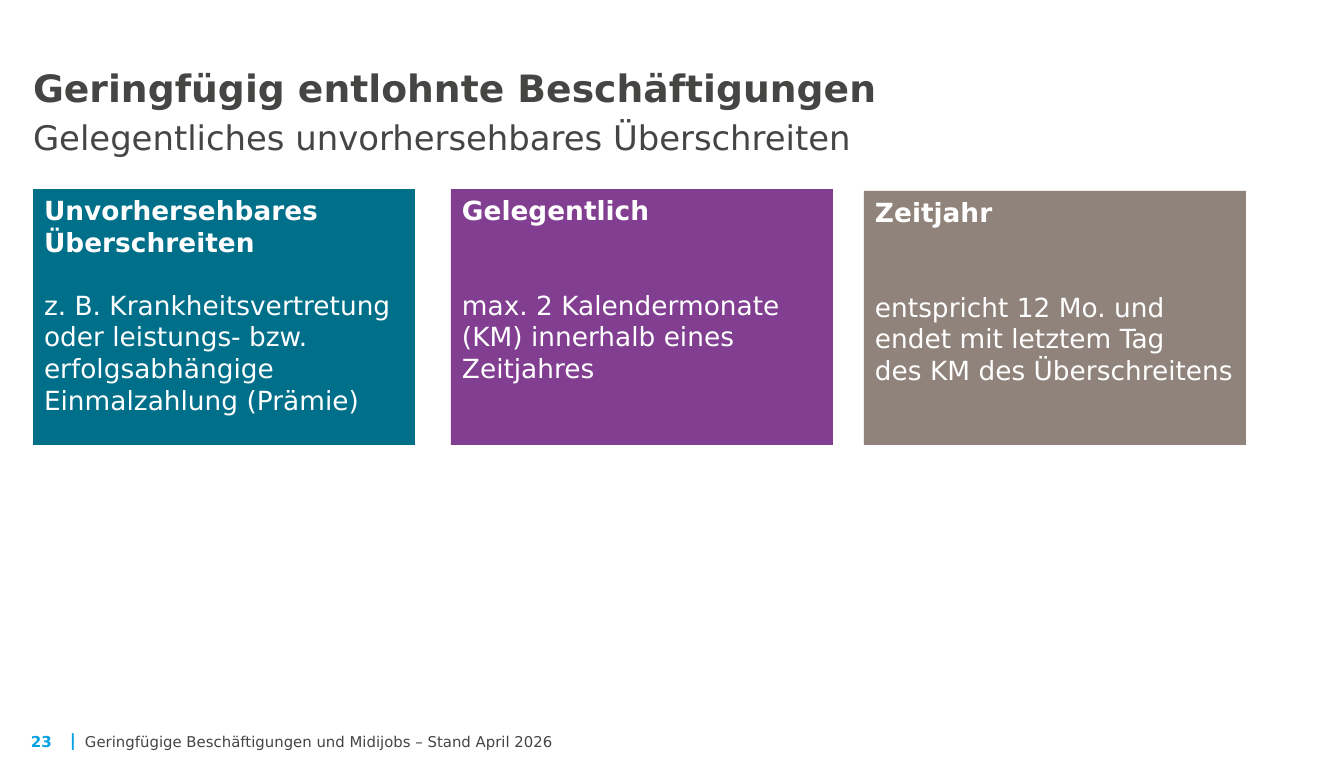
"""Build the slide on occasional, unforeseeable exceeding of the earnings limit."""
from dataclasses import dataclass

from pptx import Presentation
from pptx import util as u
from pptx.dml.color import RGBColor
from pptx.enum import shapes, text

PX = 914400 / 135.5
FONT = "DejaVu Sans"
GREY, CYAN, WHITE = "454543", "00A0E3", "FFFFFF"
CARD_WIDTH, CARD_BOTTOM = 382, 445
CARD_LINE = 16.8
BODY_ROW = 3


@dataclass
class Label:
    words: str
    left: int
    top: int
    width: int
    height: int
    size: float
    color: str
    bold: bool = False
    wrap: bool = False
    inset: tuple[int, int] = (0, 0)
    anchor: text.MSO_ANCHOR = text.MSO_ANCHOR.BOTTOM


@dataclass
class Card:
    left: int
    top: int
    fill: str
    heading: list[str]
    body: list[str]


LABELS = [
    Label("|", 70, 730, 8, 20, 8.9, CYAN, bold=True),
    Label("Geringfügige Beschäftigungen und Midijobs – Stand April 2026",
          85, 730, 1228, 20, 7.9, GREY, wrap=True),
    Label("23", 17, 725, 49, 33, 8, CYAN, bold=True, inset=(14, 7),
          anchor=text.MSO_ANCHOR.TOP),
]

CARDS = [
    Card(33, 189, "006F8A", ["Unvorhersehbares", "Überschreiten"],
         ["z. B. Krankheitsvertretung", "oder leistungs- bzw.",
          "erfolgsabhängige", "Einmalzahlung (Prämie)"]),
    Card(451, 189, "823F91", ["Gelegentlich"],
         ["max. 2 Kalendermonate", "(KM) innerhalb eines", "Zeitjahres"]),
    Card(864, 191, "8F837B", ["Zeitjahr"],
         ["entspricht 12 Mo. und", "endet mit letztem Tag",
          "des KM des Überschreitens"]),
]


def px(length: int) -> int:
    """Turn slide pixels into EMU."""
    return round(length * PX)


def rgb(color: str) -> RGBColor:
    """Turn a hex string into a colour."""
    return RGBColor.from_string(color)


def style(span, size: float, color: str, bold: bool) -> None:
    """Format one run."""
    span.font.name = FONT
    span.font.size = u.Pt(size)
    span.font.bold = bold
    span.font.color.rgb = rgb(color)


def set_frame(frame, inset: tuple[int, int], anchor: text.MSO_ANCHOR, wrap: bool) -> None:
    """Set the margins, anchor and wrapping of a text frame."""
    frame.margin_left = frame.margin_right = px(inset[0])
    frame.margin_top = frame.margin_bottom = px(inset[1])
    frame.vertical_anchor = anchor
    frame.word_wrap = wrap
    frame.auto_size = text.MSO_AUTO_SIZE.NONE


def draw_title(page) -> None:
    """Fill and place the title with its subtitle line."""
    box = page.shapes.title
    box.left, box.top, box.width, box.height = map(px, (33, 61, 1153, 96))
    set_frame(box.text_frame, (0, 0), text.MSO_ANCHOR.BOTTOM, True)
    para = box.text_frame.paragraphs[0]
    para.text = ("Geringfügig entlohnte Beschäftigungen\v"
                 "Gelegentliches unvorhersehbares Überschreiten")
    para.alignment = text.PP_ALIGN.LEFT
    para.line_spacing = u.Pt(24.8)
    heading, subtitle = para.runs
    style(heading, 20, GREY, True)
    style(subtitle, 18, GREY, False)


def draw_label(page, label: Label) -> None:
    """Draw one footer text."""
    box = page.shapes.add_textbox(
        *map(px, (label.left, label.top, label.width, label.height)))
    set_frame(box.text_frame, label.inset, label.anchor, label.wrap)
    box.text_frame.text = label.words
    style(box.text_frame.paragraphs[0].runs[0], label.size, label.color, label.bold)


def draw_card(page, card: Card) -> None:
    """Draw one coloured card, its body starting on a common row."""
    box = page.shapes.add_shape(
        shapes.MSO_SHAPE.RECTANGLE,
        *map(px, (card.left, card.top, CARD_WIDTH, CARD_BOTTOM - card.top)))
    box.shadow.inherit = False
    box.fill.solid()
    box.fill.fore_color.rgb = rgb(card.fill)
    box.line.fill.background()
    frame = box.text_frame
    set_frame(frame, (11, 5), text.MSO_ANCHOR.TOP, False)
    frame.text = "\n".join("\v".join(lines) for lines in (card.heading, card.body))
    for para, bold in zip(frame.paragraphs, (True, False)):
        para.alignment = text.PP_ALIGN.LEFT
        para.font.size = u.Pt(14)
        for span in para.runs:
            style(span, 14, WHITE, bold)
    frame.paragraphs[1].space_before = u.Pt(CARD_LINE * (BODY_ROW - len(card.heading)))


def main() -> None:
    """Build and save the deck."""
    deck = Presentation()
    deck.slide_width, deck.slide_height = px(1344), px(762)
    page = deck.slides.add_slide(deck.slide_layouts[5])
    draw_title(page)
    for label in LABELS:
        draw_label(page, label)
    for card in CARDS:
        draw_card(page, card)
    deck.save("out.pptx")


if __name__ == "__main__":
    main()
